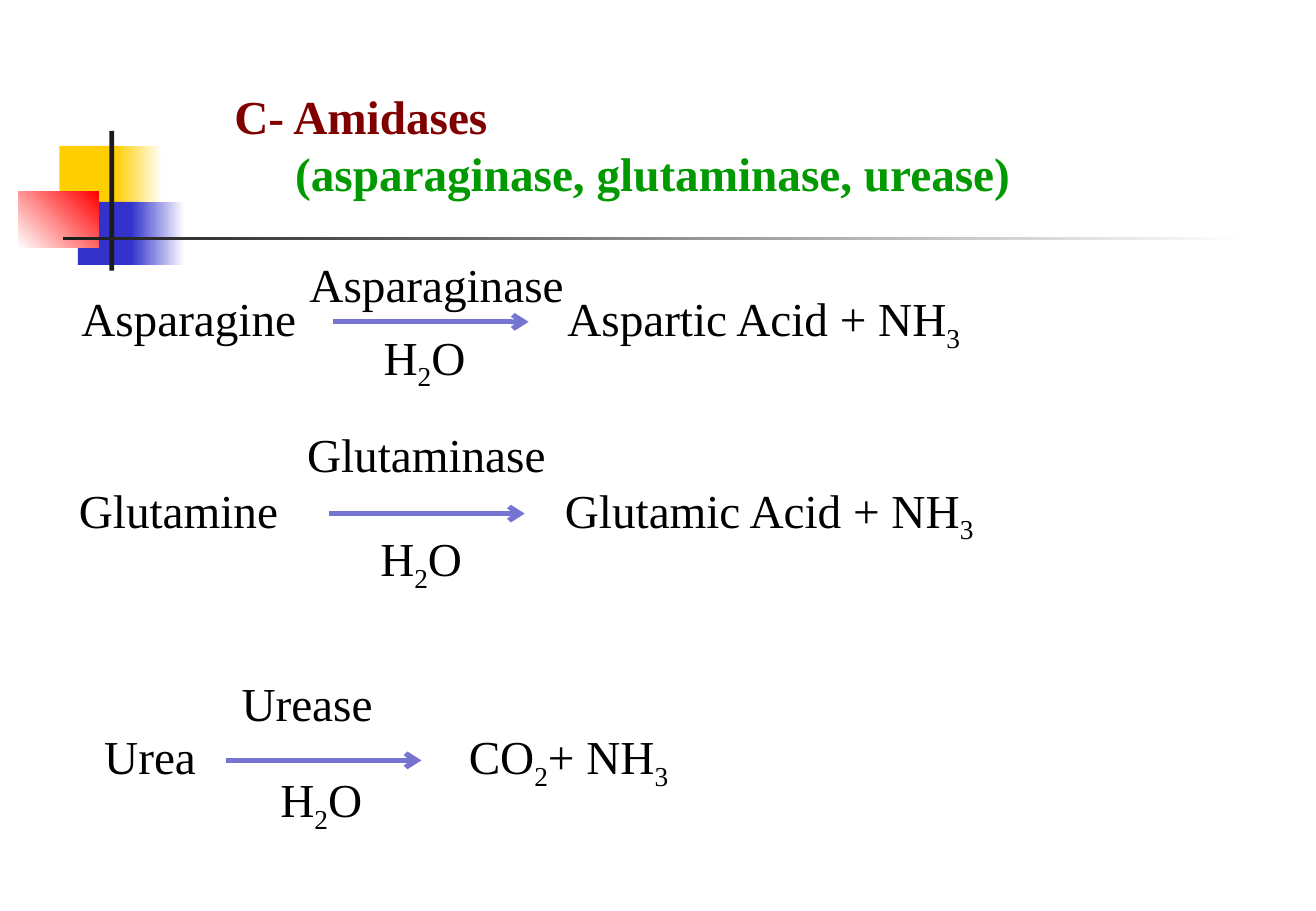
from itertools import groupby

from lxml import etree
from pptx import Presentation
from pptx.dml.color import RGBColor
from pptx.enum.shapes import MSO_CONNECTOR, MSO_SHAPE
from pptx.enum.text import MSO_ANCHOR, MSO_AUTO_SIZE
from pptx.oxml.ns import qn
from pptx.util import Cm, Pt

STRAIGHT = MSO_CONNECTOR.STRAIGHT
RECTANGLE = MSO_SHAPE.RECTANGLE
MIDDLE = MSO_ANCHOR.MIDDLE
FIT_SHAPE = MSO_AUTO_SIZE.SHAPE_TO_FIT_TEXT

WHITE = RGBColor(0xFF, 0xFF, 0xFF)
BLACK = RGBColor(0, 0, 0)
YELLOW = RGBColor(0xFF, 0xCF, 0x01)
BLUE = RGBColor(0x33, 0x33, 0xCC)
RED = RGBColor(0xFF, 0, 0)
CHARCOAL = RGBColor(0x1C, 0x1C, 0x1C)
MAROON = RGBColor(0x80, 0, 0)
GREEN = RGBColor(0, 0x99, 0)
LAVENDER = RGBColor(0x75, 0x75, 0xD1)

FONT = "Times New Roman"
SIZE = Pt(28)
ROW_HEIGHT = 1.45
ROW_WIDTH = 25
ARROW_DROP = 0.81
ARROW_LENGTH = 4.09
WATER_WIDTH = 2.29

# left, top, width, height, colours, angle
ORNAMENTS = [
    (1.24, 3.05, 1.32, 1.32, [YELLOW], 0),
    (2.41, 3.05, 0.99, 1.32, [YELLOW, WHITE], 0),
    (1.63, 4.22, 1.27, 1.32, [BLUE], 0),
    (2.74, 4.22, 1.12, 1.32, [BLUE, WHITE], 0),
    (0.38, 4.01, 1.68, 1.17, [WHITE, RED], 45),
    (2.29, 2.74, 0.1, 2.92, [CHARCOAL], 0),
    (1.32, 4.95, 24.77, 0.08, [CHARCOAL, WHITE], 0),
]

TITLE = [
    ("C- Amidases", MAROON, 1.27),
    ("(asparaginase, glutaminase, urease)", GREEN, 2.54),
]

REACTIONS = [
    {"equation": "Asparagine\tAspartic Acid + NH3", "at": (1.45, 5.92), "tab": 10.16,
     "arrow": 6.96, "enzyme": ("Asparaginase", 6.22, 5.21, 5.87), "water": (7.77, 6.73)},
    {"equation": "Glutamine\tGlutamic Acid + NH3", "at": (1.4, 9.93), "tab": 10.16,
     "arrow": 6.88, "enzyme": ("Glutaminase", 6.17, 8.76, 5.54), "water": (7.7, 10.95)},
    {"equation": "Urea\tCO2+ NH3", "at": (1.93, 15.09), "tab": 7.62,
     "arrow": 4.72, "enzyme": ("Urease", 4.8, 13.97, 3.28), "water": (5.61, 15.98)},
]


def add_ornament(page, left, top, width, height, colours, angle):
    block = page.shapes.add_shape(RECTANGLE, Cm(left), Cm(top), Cm(width), Cm(height))
    block.shadow.inherit = False
    block.line.fill.background()
    if len(colours) == 1:
        block.fill.solid()
        block.fill.fore_color.rgb = colours[0]
        return
    block.fill.gradient()
    block.fill.gradient_angle = angle
    for stop, colour in zip(block.fill.gradient_stops, colours):
        stop.color.rgb = colour


def add_box(page, left, top, width, height, wrap):
    box = page.shapes.add_textbox(Cm(left), Cm(top), Cm(width), Cm(height))
    box.text_frame.word_wrap = wrap
    box.text_frame.auto_size = FIT_SHAPE
    return box.text_frame


def set_font(para, colour, bold=False):
    para.font.name = FONT
    para.font.size = SIZE
    para.font.bold = bold
    para.font.color.rgb = colour


def add_title(page):
    frame = add_box(page, 3.38, 1.7, 23.06, 2.62, True)
    frame.vertical_anchor = MIDDLE
    for index, (text, colour, indent) in enumerate(TITLE):
        para = frame.add_paragraph() if index else frame.paragraphs[0]
        para.text = text
        set_font(para, colour, True)
        para._p.get_or_add_pPr().set("marL", str(Cm(indent)))


def add_formula(page, text, left, top, width, tab=None):
    frame = add_box(page, left, top, width, ROW_HEIGHT, tab is not None)
    para = frame.paragraphs[0]
    set_font(para, BLACK)
    if tab:
        tabs = etree.Element(qn("a:tabLst"))
        etree.SubElement(tabs, qn("a:tab"), pos=str(Cm(tab)), algn="l")
        para._p.get_or_add_pPr().insert(0, tabs)
    for subscript, letters in groupby(text, str.isdigit):
        span = para.add_run()
        span.text = "".join(letters)
        if subscript:
            span._r.get_or_add_rPr().set("baseline", "-25000")


def add_arrow(page, left, top):
    arrow = page.shapes.add_connector(
        STRAIGHT, Cm(left), Cm(top), Cm(left + ARROW_LENGTH), Cm(top))
    arrow.line.color.rgb = LAVENDER
    arrow.line.width = Pt(3)
    etree.SubElement(arrow.line._get_or_add_ln(), qn("a:tailEnd"), type="arrow")
    etree.SubElement(arrow._element.spPr, qn("a:effectLst"))


def add_reaction(page, reaction):
    left, top = reaction["at"]
    add_formula(page, reaction["equation"], left, top, ROW_WIDTH, reaction["tab"])
    add_arrow(page, reaction["arrow"], top + ARROW_DROP)
    add_formula(page, *reaction["enzyme"])
    add_formula(page, "H2O", *reaction["water"], WATER_WIDTH)


def main():
    deck = Presentation()
    deck.slide_width = Cm(27.51)
    deck.slide_height = Cm(19.05)
    page = deck.slides.add_slide(deck.slide_layouts[6])
    for ornament in ORNAMENTS:
        add_ornament(page, *ornament)
    add_title(page)
    for reaction in REACTIONS:
        add_reaction(page, reaction)
    deck.save("out.pptx")


if __name__ == "__main__":
    main()
